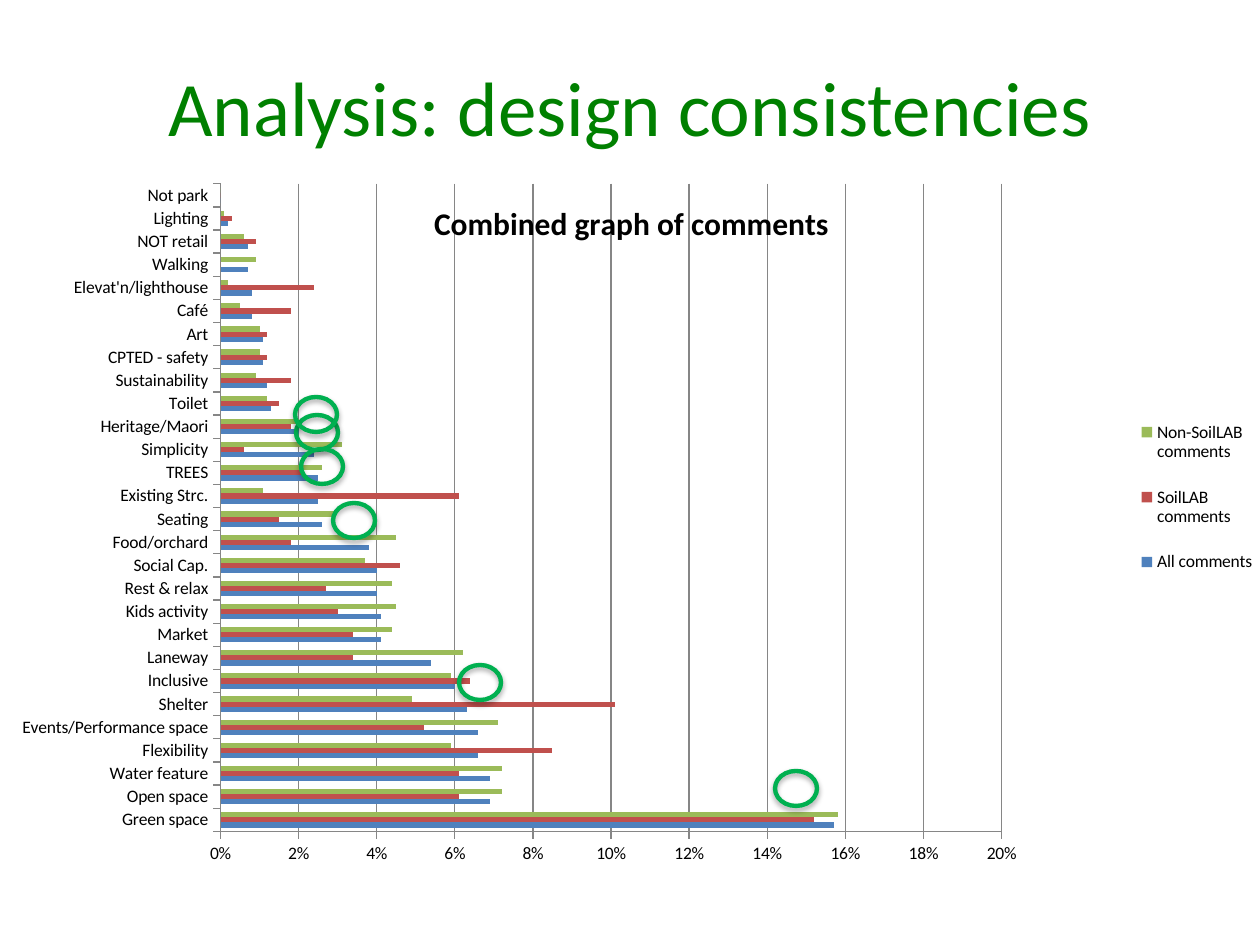
from typing import NamedTuple

from lxml import etree
from pptx import Presentation
from pptx import util as u
from pptx.chart import data as cd
from pptx.dml import color
from pptx.enum import chart as ch, shapes, text
from pptx.oxml import ns

SCALE = 914400 / 126  # EMU in one px
FONT = "Calibri"
HUES = {"title": "008000", "ring": "00B050", "text": "000000", "grid": "868686"}


class Series(NamedTuple):
    name: str
    hue: str
    vals: list[int]  # tenths of a percent


class Ring(NamedTuple):
    x: int
    y: int
    w: int = 42
    h: int = 35


CATS = [
    "Green space", "Open space", "Water feature", "Flexibility",
    "Events/Performance space", "Shelter", "Inclusive", "Laneway", "Market",
    "Kids activity", "Rest & relax", "Social Cap.", "Food/orchard", "Seating",
    "Existing Strc.", "TREES", "Simplicity", "Heritage/Maori", "Toilet",
    "Sustainability", "CPTED - safety", "Art", "Café", "Elevat'n/lighthouse",
    "Walking", "NOT retail", "Lighting", "Not park",
]
SERIES = [
    Series("All comments", "4F81BD",
           [157, 69, 69, 66, 66, 63, 60, 54, 41, 41, 40, 40, 38, 26,
            25, 25, 24, 20, 13, 12, 11, 11, 8, 8, 7, 7, 2, 0]),
    Series("SoilLAB comments", "C0504D",
           [152, 61, 61, 85, 52, 101, 64, 34, 34, 30, 27, 46, 18, 15,
            61, 21, 6, 18, 15, 18, 12, 12, 18, 24, 0, 9, 3, 0]),
    Series("Non-SoilLAB comments", "9BBB59",
           [158, 72, 72, 59, 71, 49, 59, 62, 44, 45, 44, 37, 45, 29,
            11, 26, 31, 20, 12, 9, 10, 10, 5, 2, 9, 6, 1, 0]),
]
RINGS = [Ring(775, 771), Ring(459, 665), Ring(333, 503),
         Ring(296, 415), Ring(301, 449), Ring(295, 397)]


def px(*vals: int) -> list[u.Emu]:
    return [u.Emu(round(v * SCALE)) for v in vals]


def rgb(key: str) -> color.RGBColor:
    return color.RGBColor.from_string(HUES.get(key, key))


def style(obj, opts: dict) -> None:
    for key, val in opts.items():
        setattr(obj, key, val)


def set_font(font, size: int, hue: str, bold: bool = False) -> None:
    style(font, {"name": FONT, "size": u.Pt(size), "bold": bold})
    font.color.rgb = rgb(hue)


def place(host, index: int, **spots: float | str) -> None:
    """Give a chart element a manual layout."""
    for old in host.findall(ns.qn("c:layout")):
        host.remove(old)
    lay = etree.Element(ns.qn("c:layout"))
    man = etree.SubElement(lay, ns.qn("c:manualLayout"))
    for tag, val in spots.items():
        etree.SubElement(man, ns.qn(f"c:{tag}")).set("val", str(val))
    host.insert(index, lay)


def add_title(slide) -> None:
    box = slide.shapes.add_textbox(*px(63, 38, 1134, 135))
    frame = box.text_frame
    style(frame, {"word_wrap": True,
                  "vertical_anchor": text.MSO_ANCHOR.MIDDLE})
    para = frame.paragraphs[0]
    style(para, {"text": "Analysis: design consistencies",
                 "alignment": text.PP_ALIGN.CENTER})
    set_font(para.runs[0].font, 44, "title")


def add_graph(slide) -> None:
    data = cd.CategoryChartData(number_format="0%")
    data.categories = CATS
    for item in SERIES:
        data.add_series(item.name, [v / 1000 for v in item.vals])
    graph = slide.shapes.add_chart(
        ch.XL_CHART_TYPE.BAR_CLUSTERED, *px(0, 173, 1260, 772), data).chart
    set_font(graph.font, 10, "text")

    # Bars
    plot = graph.plots[0]
    style(plot, {"gap_width": 150, "vary_by_categories": False})
    for bars, item in zip(plot.series, SERIES):
        bars.format.fill.solid()
        bars.format.fill.fore_color.rgb = rgb(item.hue)
        bars.invert_if_negative = False
    edge = {"xMode": "edge", "yMode": "edge"}
    area = graph._chartSpace.find(".//" + ns.qn("c:plotArea"))
    place(area, 0, layoutTarget="inner", **edge,
          x=0.175, y=0.014, w=0.62, h=0.839)

    # Axes
    val = graph.value_axis
    style(val, {"minimum_scale": 0, "maximum_scale": 0.2, "major_unit": 0.02,
                "has_major_gridlines": True})
    style(val.tick_labels, {"number_format": "0%",
                            "number_format_is_linked": False})
    graph.category_axis.has_major_gridlines = False
    for axis in (val, graph.category_axis):
        style(axis, {"major_tick_mark": ch.XL_TICK_MARK.OUTSIDE,
                     "minor_tick_mark": ch.XL_TICK_MARK.NONE})
        axis.format.line.color.rgb = rgb("grid")
    val.major_gridlines.format.line.color.rgb = rgb("grid")

    # Heading over the plot
    graph.has_title = True
    head = graph.chart_title
    para = head.text_frame.paragraphs[0]
    run = para.add_run()
    run.text = "Combined graph of comments"
    set_font(run.font, 18, "text", True)
    place(head._element, 1, **edge, x=0.34, y=0.03)
    head._element.find(ns.qn("c:overlay")).set("val", "1")

    # Legend
    graph.has_legend = True
    style(graph.legend, {"position": ch.XL_LEGEND_POSITION.RIGHT,
                         "include_in_layout": False})
    set_font(graph.legend.font, 10, "text")
    place(graph.legend._element, 1, **edge, x=0.9, y=0.29, w=0.1, h=0.26)


def add_ring(slide, ring: Ring) -> None:
    oval = slide.shapes.add_shape(shapes.MSO_SHAPE.OVAL, *px(*ring))
    oval.fill.background()
    oval.line.color.rgb = rgb("ring")
    oval.line.width = u.Pt(2.5)
    # Soft shadow below
    oval.shadow.inherit = False
    glow = oval._element.spPr.find(ns.qn("a:effectLst"))
    cast = etree.SubElement(
        glow, ns.qn("a:outerShdw"), blurRad="40000", dist="23000",
        dir="5400000", rotWithShape="0")
    tint = etree.SubElement(cast, ns.qn("a:srgbClr"), val=HUES["text"])
    etree.SubElement(tint, ns.qn("a:alpha"), val="35000")


def main() -> None:
    deck = Presentation()
    width, height = px(1260, 945)
    style(deck, {"slide_width": width, "slide_height": height})
    slide = deck.slides.add_slide(deck.slide_layouts[6])
    add_title(slide)
    add_graph(slide)
    for ring in RINGS:
        add_ring(slide, ring)
    deck.save("out.pptx")


if __name__ == "__main__":
    main()
